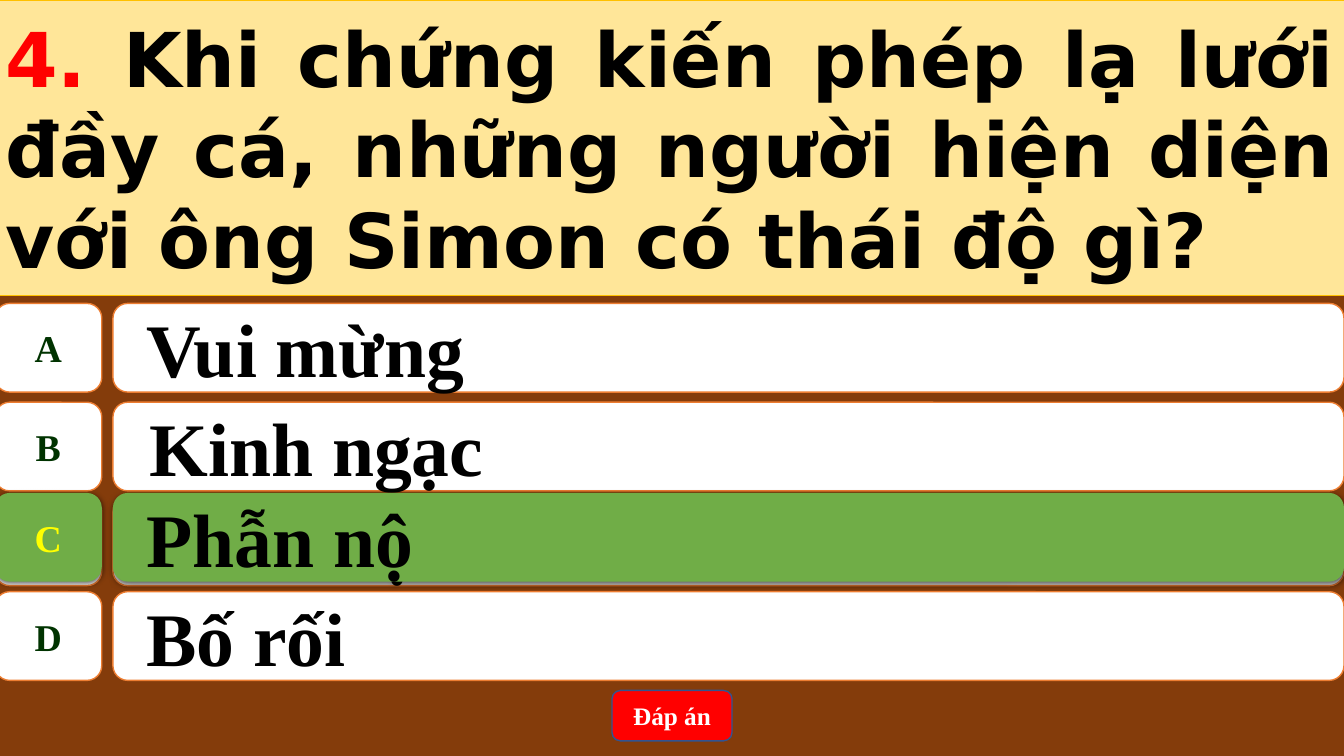
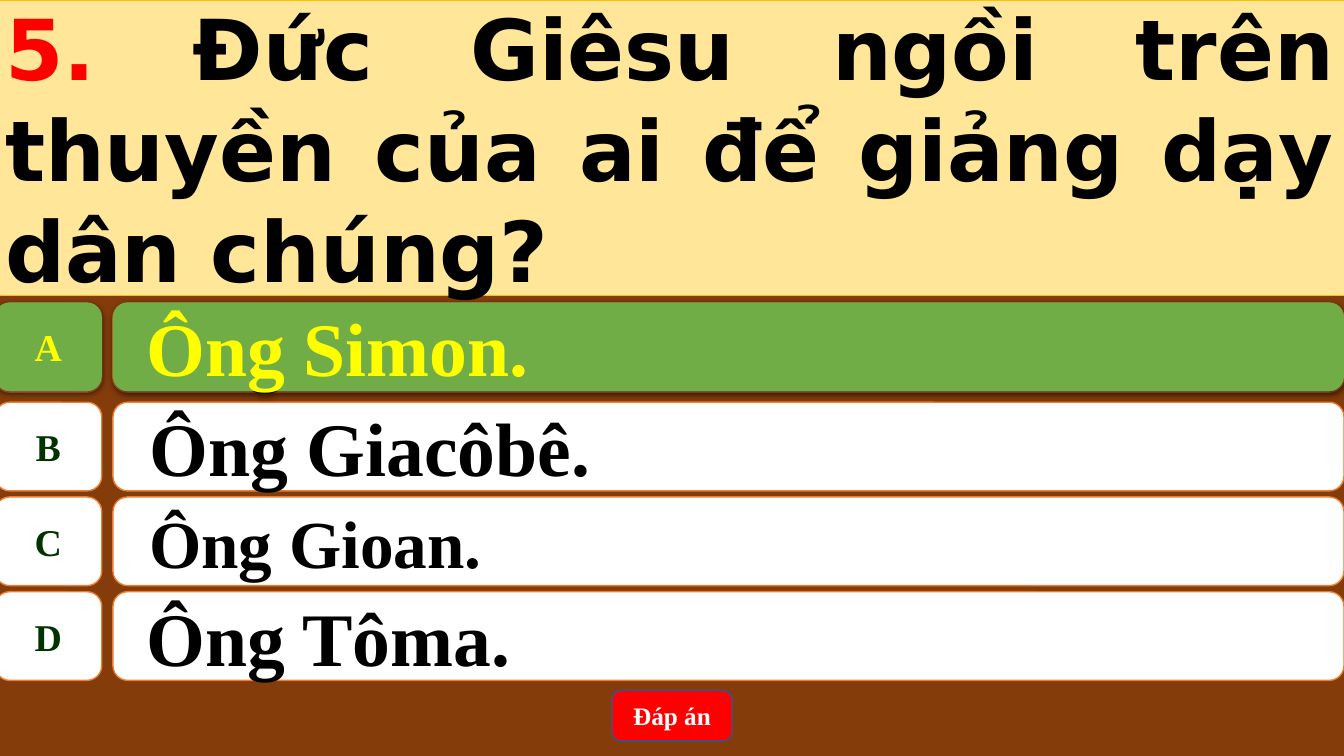
from dataclasses import dataclass

from lxml import etree
from pptx import Presentation
from pptx.dml.color import RGBColor
from pptx.enum.shapes import MSO_SHAPE as Shape
from pptx.enum.text import MSO_ANCHOR as Anchor, MSO_AUTO_SIZE as AutoSize, PP_ALIGN as Align
from pptx.oxml.ns import qn
from pptx.util import Inches, Pt

# Shared style
BROWN, CREAM, GOLD = "843C0B", "FFE699", "FFC000"
WHITE, BLACK, RED, YELLOW = "FFFFFF", "000000", "FF0000", "FFFF00"
GREEN, DARK_GREEN, ORANGE, BLUE = "70AD47", "003300", "ED7D31", "325491"
QUESTION_FONT, ANSWER_FONT = "DejaVu Sans", "Times New Roman"

# Shared layout, in inches
LEFT, FULL_WIDTH, QUESTION_HEIGHT = -0.05, 13.39, 2.93
LETTER_WIDTH, ANSWER_LEFT, ANSWER_WIDTH, ROW_HEIGHT = 1.06, 1.12, 12.21, 0.88
ROW_TOPS = {"A": 3.01, "B": 3.99, "C": 4.93, "D": 5.87}
PLAIN_INDENT, LIST_INDENT = 0.19, 0.22


@dataclass
class Answer:
    letter: str
    text: str
    indent: float = PLAIN_INDENT
    size: int = 54


@dataclass
class Quiz:
    number: str
    question: str
    question_size: int
    answers: list[Answer]
    correct: Answer
    correct_top: float
    correct_color: str


QUIZZES = [
    Quiz(
        "4. ",
        "Khi chứng kiến phép lạ lưới đầy cá, những người hiện diện với ông Simon có thái độ gì?",
        54,
        [
            Answer("A", "Vui mừng"),
            Answer("B", "Kinh ngạc", LIST_INDENT),
            Answer("C", "Phẫn nộ", LIST_INDENT),
            Answer("D", "Bố rối"),
        ],
        Answer("C", "Phẫn nộ"), 4.89, BLACK,
    ),
    Quiz(
        "5. ",
        "Đức Giêsu ngồi trên thuyền của ai để giảng dạy dân chúng?",
        60,
        [
            Answer("A", "Ông Simon."),
            Answer("B", "Ông Giacôbê.", LIST_INDENT),
            Answer("C", "Ông Gioan.", LIST_INDENT, 48),
            Answer("D", "Ông Tôma."),
        ],
        Answer("A", "Ông Simon."), 3, YELLOW,
    ),
]


def rgb(color: str) -> RGBColor:
    return RGBColor.from_string(color)


def paint(shape, fill: str, line: str | None, line_width: float = 1) -> None:
    shape.fill.solid()
    shape.fill.fore_color.rgb = rgb(fill)
    if line is None:
        shape.line.fill.background()
    else:
        shape.line.color.rgb = rgb(line)
        shape.line.width = Pt(line_width)


def style_font(font, name: str, size: float) -> None:
    font.name, font.size, font.bold = name, Pt(size), True


def add_shadow(shape) -> None:
    """Soft black shadow falling straight down."""
    effects = shape._element.spPr.find(qn("a:effectLst"))
    shadow = etree.SubElement(effects, qn("a:outerShdw"), blurRad=str(Pt(4.5)),
                              dist=str(Pt(1.5)), dir="5400000", rotWithShape="0")
    color = etree.SubElement(shadow, qn("a:srgbClr"), val=BLACK)
    etree.SubElement(color, qn("a:alpha"), val="63000")


def add_box(shapes, kind: Shape, left: float, top: float, width: float, height: float,
            fill: str, line: str | None, text: str, size: float, color: str,
            align: Align = Align.CENTER):
    box = shapes.add_shape(kind, Inches(left), Inches(top), Inches(width), Inches(height))
    box.shadow.inherit = False
    paint(box, fill, line)
    box.text_frame.vertical_anchor = Anchor.MIDDLE
    paragraph = box.text_frame.paragraphs[0]
    paragraph.text = text
    paragraph.alignment = align
    style_font(paragraph.font, ANSWER_FONT, size)
    paragraph.font.color.rgb = rgb(color)
    return box


def add_row(slide, answer: Answer, top: float, fill: str, line: str | None,
            letter_color: str, text_color: str):
    """Group a letter box with its answer bar."""
    group = slide.shapes.add_group_shape()
    bar = add_box(group.shapes, Shape.ROUNDED_RECTANGLE, ANSWER_LEFT, top, ANSWER_WIDTH,
                  ROW_HEIGHT, fill, line, answer.text, answer.size, text_color, Align.LEFT)
    properties = bar.text_frame.paragraphs[0]._p.get_or_add_pPr()
    properties.set("marL", str(Inches(answer.indent)))
    properties.set("indent", "0")
    letter = add_box(group.shapes, Shape.FLOWCHART_ALTERNATE_PROCESS, LEFT, top, LETTER_WIDTH,
                     ROW_HEIGHT, fill, line, answer.letter, 27, letter_color)
    letter.text_frame.word_wrap = False
    return bar, letter


def add_question(slide, quiz: Quiz) -> None:
    title = slide.shapes.title
    title.left, title.top = Inches(LEFT), Inches(0)
    title.width, title.height = Inches(FULL_WIDTH), Inches(QUESTION_HEIGHT)
    paint(title, CREAM, GOLD, 0.5)
    frame = title.text_frame
    frame.auto_size, frame.word_wrap = AutoSize.NONE, True
    frame.vertical_anchor = Anchor.MIDDLE
    paragraph = frame.paragraphs[0]
    paragraph.alignment = Align.JUSTIFY
    style_font(paragraph.font, QUESTION_FONT, quiz.question_size)
    for text, color in ((quiz.number, RED), (quiz.question, BLACK)):
        run = paragraph.add_run()
        run.text = text
        run.font.color.rgb = rgb(color)


def build_slide(presentation, quiz: Quiz) -> None:
    slide = presentation.slides.add_slide(presentation.slide_layouts[5])
    slide.background.fill.solid()
    slide.background.fill.fore_color.rgb = rgb(BROWN)
    add_question(slide, quiz)

    # Answer choices
    for answer in quiz.answers:
        add_row(slide, answer, ROW_TOPS[answer.letter], WHITE, ORANGE, DARK_GREEN, BLACK)

    # Answer button
    add_box(slide.shapes, Shape.ROUNDED_RECTANGLE, 6.07, 6.85, 1.19, 0.5,
            RED, BLUE, "Đáp án", 18, WHITE).text_frame.word_wrap = False

    # Correct answer, laid over its choice
    for box in add_row(slide, quiz.correct, quiz.correct_top, GREEN, None,
                       YELLOW, quiz.correct_color):
        add_shadow(box)


def main() -> None:
    presentation = Presentation()
    presentation.slide_width, presentation.slide_height = Inches(13.33), Inches(7.5)
    for quiz in QUIZZES:
        build_slide(presentation, quiz)
    presentation.save("out.pptx")


if __name__ == "__main__":
    main()
